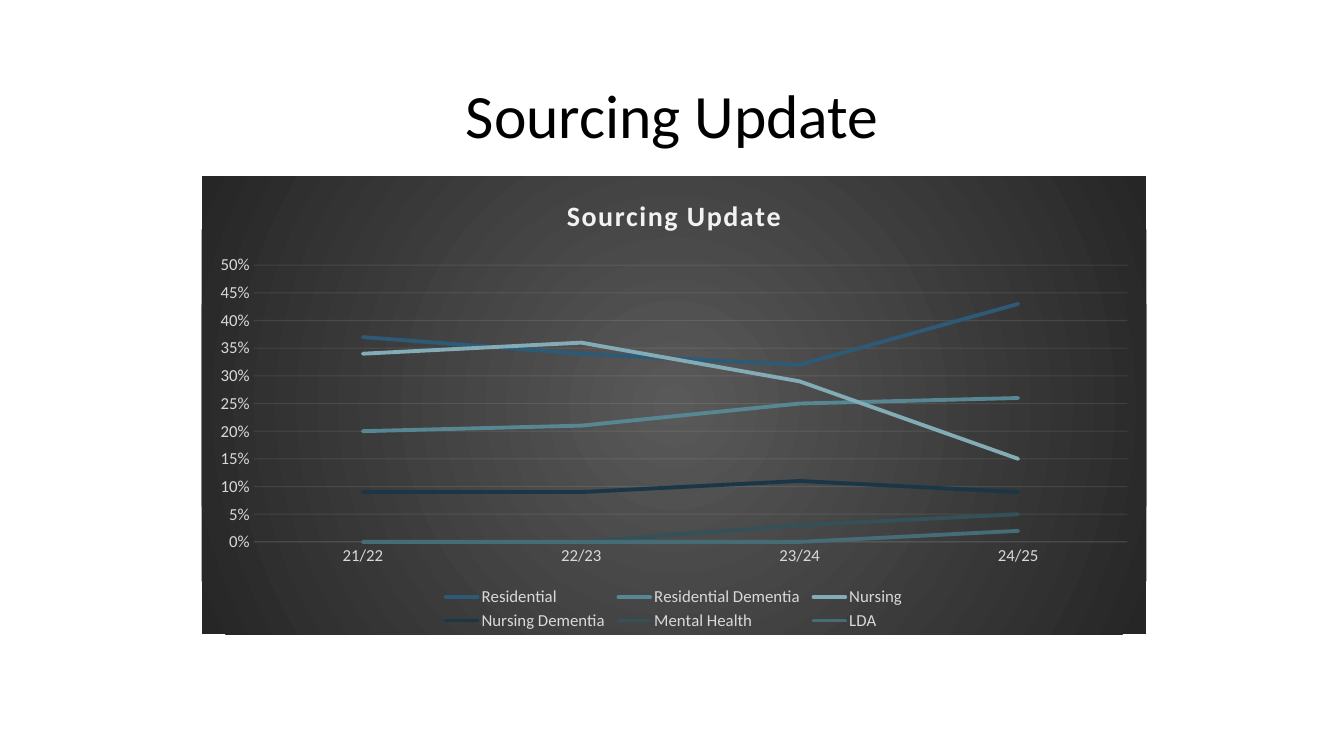
from lxml import etree
from pptx import Presentation
from pptx.chart.data import CategoryChartData
from pptx.dml.color import RGBColor
from pptx.enum.chart import XL_CHART_TYPE, XL_LEGEND_POSITION, XL_TICK_MARK
from pptx.enum.text import MSO_ANCHOR, PP_ALIGN
from pptx.oxml import parse_xml
from pptx.oxml.ns import nsdecls, qn
from pptx.util import Inches, Pt

LINE = XL_CHART_TYPE.LINE
BOTTOM = XL_LEGEND_POSITION.BOTTOM
NO_TICK = XL_TICK_MARK.NONE
CENTER = PP_ALIGN.CENTER
MIDDLE = MSO_ANCHOR.MIDDLE

WIDTH, HEIGHT = Inches(13.33), Inches(7.5)
FONT = "Calibri"
HEADING = "Sourcing Update"
TITLE_ONLY = 5

BLACK = RGBColor(0x00, 0x00, 0x00)
OFF_WHITE = RGBColor(0xF2, 0xF2, 0xF2)
LABEL_GRAY = RGBColor(0xD9, 0xD9, 0xD9)
GLOW_GRAY = RGBColor(0x59, 0x59, 0x59)
EDGE_GRAY = RGBColor(0x26, 0x26, 0x26)

YEARS = ["21/22", "22/23", "23/24", "24/25"]
CARE_TYPES = [
    ("Residential", (0.37, 0.34, 0.32, 0.43), RGBColor(0x2C, 0x5A, 0x77)),
    ("Residential Dementia", (0.2, 0.21, 0.25, 0.26), RGBColor(0x57, 0x87, 0x93)),
    ("Nursing", (0.34, 0.36, 0.29, 0.15), RGBColor(0x84, 0xAC, 0xB6)),
    ("Nursing Dementia", (0.09, 0.09, 0.11, 0.09), RGBColor(0x1A, 0x36, 0x47)),
    ("Mental Health", (0, 0, 0.03, 0.05), RGBColor(0x34, 0x51, 0x58)),
    ("LDA", (0, 0, 0, 0.02), RGBColor(0x46, 0x6D, 0x76)),
]


def set_font(font, size, color, bold=False):
    font.name = FONT
    font.size = Pt(size)
    font.bold = bold
    font.color.rgb = color


def place(shape, left, top, width, height):
    """Position a shape, given in inches, on the slide."""
    shape.left, shape.width = Inches(left), Inches(width)
    shape.top, shape.height = Inches(top), Inches(height)


def add_title(page):
    title = page.shapes.title
    place(title, 0.92, 0.4, 11.5, 1.45)
    frame = title.text_frame
    frame.text = HEADING
    frame.vertical_anchor = MIDDLE
    para = frame.paragraphs[0]
    para.alignment = CENTER
    set_font(para.font, 44, BLACK)


def set_faint_line(line):
    line.width = Pt(0.75)
    line.color.rgb = OFF_WHITE
    color = line.fill._xPr.find(".//" + qn("a:srgbClr"))
    etree.SubElement(color, qn("a:alpha")).set("val", "10000")


def set_layout(element, index, shares, inner=False):
    """Fix a chart part's place as shares of the chart."""
    for old in element.findall(qn("c:layout")):
        element.remove(old)
    target = '<c:layoutTarget val="inner"/>' if inner else ""
    modes = '<c:xMode val="edge"/><c:yMode val="edge"/>'
    sizes = "".join(f'<c:{key} val="{share}"/>' for key, share in zip("xywh", shares))
    element.insert(index, parse_xml(
        f'<c:layout {nsdecls("c")}><c:manualLayout>{target}{modes}{sizes}'
        "</c:manualLayout></c:layout>"))


def set_radial_background(chart):
    stops = "".join(
        f'<a:gs pos="{position}"><a:srgbClr val="{color}"/></a:gs>'
        for position, color in ((0, GLOW_GRAY), (100000, EDGE_GRAY)))
    chart._chartSpace.find(qn("c:chart")).addnext(parse_xml(
        f'<c:spPr {nsdecls("c", "a")}><a:gradFill><a:gsLst>{stops}</a:gsLst>'
        '<a:path path="circle"><a:fillToRect l="50000" t="50000" r="50000" b="50000"/>'
        "</a:path></a:gradFill><a:ln><a:noFill/></a:ln></c:spPr>"))


def format_axes(chart):
    years, shares = chart.category_axis, chart.value_axis
    for axis in (years, shares):
        axis.major_tick_mark = axis.minor_tick_mark = NO_TICK
        set_font(axis.tick_labels.font, 12, LABEL_GRAY)
    set_faint_line(years.format.line)
    shares.format.line.fill.background()
    shares.has_major_gridlines = True
    set_faint_line(shares.major_gridlines.format.line)
    shares.minimum_scale, shares.maximum_scale, shares.major_unit = 0, 0.5, 0.05
    shares.tick_labels.number_format = "0%"
    shares.tick_labels.number_format_is_linked = False


def format_chart_title(chart):
    chart.has_title = True
    chart.chart_title.include_in_layout = False
    frame = chart.chart_title.text_frame
    frame.text = HEADING
    para = frame.paragraphs[0]
    set_font(para.font, 20, OFF_WHITE, bold=True)
    para._p.pPr.find(qn("a:defRPr")).set("spc", "100")


def format_legend(chart):
    chart.has_legend = True
    legend = chart.legend
    legend.position = BOTTOM
    legend.include_in_layout = False
    set_font(legend.font, 12, LABEL_GRAY)
    set_layout(legend._element, 1, (0.25, 0.89, 0.5, 0.11))


def add_sourcing_chart(page):
    data = CategoryChartData(number_format="0%")
    data.categories = YEARS
    for name, values, _ in CARE_TYPES:
        data.add_series(name, values)
    graphic = page.shapes.add_chart(LINE, 0, 0, WIDTH, HEIGHT, data)
    place(graphic, 2, 1.75, 9.37, 4.54)
    chart = graphic.chart
    set_font(chart.font, 10, BLACK)
    set_radial_background(chart)

    # Series lines
    plot = chart.plots[0]
    plot.vary_by_categories = False
    for series, (_, _, color) in zip(plot.series, CARE_TYPES):
        series.smooth = False
        line = series.format.line
        line.width = Pt(2.75)
        line.color.rgb = color
        line.fill._xPr.set("cap", "rnd")

    # Surrounding parts
    format_axes(chart)
    format_chart_title(chart)
    format_legend(chart)
    plot_area = chart._chartSpace.find(".//" + qn("c:plotArea"))
    set_layout(plot_area, 0, (0.055, 0.194, 0.925, 0.605), inner=True)


def main():
    deck = Presentation()
    deck.slide_width, deck.slide_height = WIDTH, HEIGHT
    page = deck.slides.add_slide(deck.slide_layouts[TITLE_ONLY])
    add_title(page)
    add_sourcing_chart(page)
    deck.save("out.pptx")


if __name__ == "__main__":
    main()
